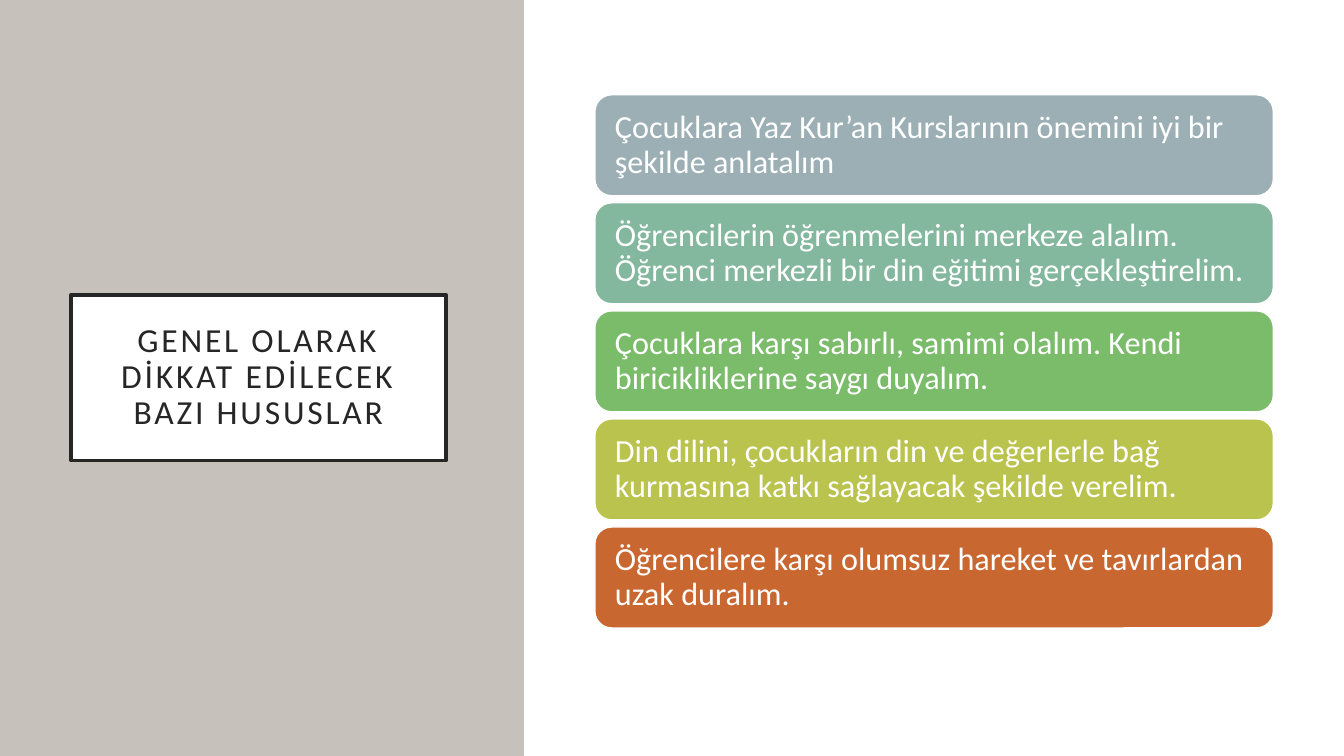
from pptx import Presentation
from pptx.dml.color import RGBColor
from pptx.enum.shapes import MSO_SHAPE as Shape
from pptx.enum.text import MSO_ANCHOR as Anchor, MSO_AUTO_SIZE as AutoSize, PP_ALIGN as Align
from pptx.util import Inches, Pt

WIDTH, HEIGHT = 13.33, 7.5
SPLIT = 0.39 * WIDTH
WHITE, INK, STONE = "FFFFFF", "262626", "C6C1BA"
HEADING = "GENEL OLARAK DİKKAT EDİLECEK BAZI HUSUSLAR"
ADVICE = [
    ("Çocuklara Yaz Kur’an Kurslarının önemini iyi bir şekilde anlatalım", "9BAFB5"),
    ("Öğrencilerin öğrenmelerini merkeze alalım. Öğrenci merkezli bir din eğitimi "
     "gerçekleştirelim.", "83B79E"),
    ("Çocuklara karşı sabırlı, samimi olalım. Kendi biricikliklerine saygı duyalım.", "7ABC69"),
    ("Din dilini, çocukların din ve değerlerle bağ kurmasına katkı sağlayacak şekilde "
     "verelim.", "BAC34D"),
    ("Öğrencilere karşı olumsuz hareket ve tavırlardan uzak duralım.", "C96731"),
]


def color(hex_code):
    """Turn a hex string into a colour."""
    return RGBColor.from_string(hex_code)


def apply(target, formats):
    """Set each attribute of the target from a dict."""
    for name, value in formats.items():
        setattr(target, name, value)


def paint(part, fill, line=None, weight=1):
    """Fill a part and outline it, or leave it without an outline."""
    part.fill.solid()
    part.fill.fore_color.rgb = color(fill)
    if line:
        part.line.color.rgb = color(line)
        part.line.width = Pt(weight)
    else:
        part.line.fill.background()


def write(part, words, size, ink, align, inset):
    """Write one paragraph, centred vertically, and return its run."""
    frame = part.text_frame
    sides = ("left", "right", "top", "bottom")
    apply(frame, {f"margin_{side}": Inches(inset) for side in sides})
    apply(frame, {"word_wrap": True, "auto_size": AutoSize.NONE,
                  "vertical_anchor": Anchor.MIDDLE})
    paragraph = frame.paragraphs[0]
    apply(paragraph, {"alignment": align, "line_spacing": 0.9})
    run = paragraph.add_run()
    run.text = words
    apply(run.font, {"name": "Calibri", "size": Pt(size)})
    run.font.color.rgb = color(ink)
    return run


def add_block(slide, kind, box, fill, line=None):
    """Add a painted shape without a shadow in the given box."""
    block = slide.shapes.add_shape(kind, *map(Inches, box))
    block.shadow.inherit = False
    paint(block, fill, line)
    return block


def heading_panel(slide, box):
    """Draw the side panel with the framed title inside it."""
    left, top, width, height = box
    add_block(slide, Shape.RECTANGLE, box, STONE)
    title = slide.shapes.title
    frame = {"left": left + 0.135 * width, "top": top + 0.39 * height,
             "width": 0.716 * width, "height": 0.219 * height}
    apply(title, {name: Inches(length) for name, length in frame.items()})
    paint(title, WHITE, INK, 2.5)
    run = write(title, HEADING, 24, INK, Align.CENTER, 0.2)
    run.font._element.set("spc", "200")
    slide.shapes._spTree.append(title._element)


def advice_cards(slide, box):
    """Stack one rounded card per piece of advice, evenly over the box."""
    left, top, width, height = box
    gap = 0.07
    card_height = (height + gap) / len(ADVICE) - gap
    for row, (words, fill) in enumerate(ADVICE):
        card_top = top + row * (card_height + gap)
        card = add_block(slide, Shape.ROUNDED_RECTANGLE,
                         (left, card_top, width, card_height), fill, WHITE)
        write(card, words, 23, WHITE, Align.LEFT, 0.15)


def main():
    """Build the slide and save it."""
    deck = Presentation()
    apply(deck, {"slide_width": Inches(WIDTH), "slide_height": Inches(HEIGHT)})
    slide = deck.slides.add_slide(deck.slide_layouts[5])
    heading_panel(slide, (0, 0, SPLIT, HEIGHT))
    add_block(slide, Shape.RECTANGLE, (SPLIT, 0, WIDTH - SPLIT, HEIGHT), WHITE)
    advice_cards(slide, (5.9, 0.94, 6.73, 5.29))
    deck.save("out.pptx")


if __name__ == "__main__":
    main()
